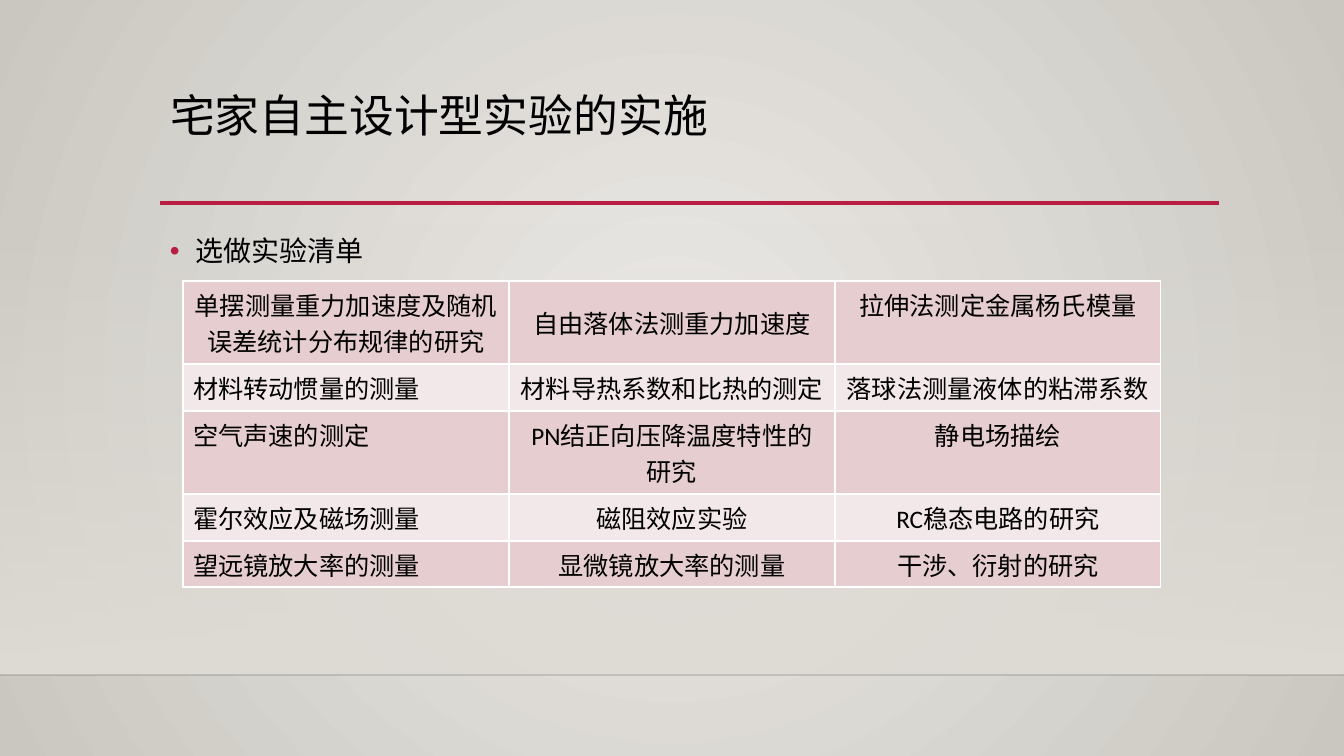
import pptx
import pptx.util
import pptx.dml.color
import pptx.enum.shapes
import pptx.enum.text
import pptx.oxml
import pptx.oxml.ns

PX = 914400 / 100.8
COLORS = {
    "text": "000000", "accent": "B71E42", "border": "FFFFFF",
    "odd_row": "E6CDCF", "even_row": "F3E8E9",
    "bg_center": "ECEAE7", "bg_edge": "CAC7C1", "wall": "DFDBD5",
    "floor_line": "000001",
}
RGB = {name: pptx.dml.color.RGBColor.from_string(c) for name, c in COLORS.items()}
NS = pptx.oxml.ns.nsdecls("a")
ALIGN = pptx.enum.text.PP_ALIGN
ANCHOR = pptx.enum.text.MSO_ANCHOR


def px(*lengths):
    return [pptx.util.Emu(round(n * PX)) for n in lengths]


def write(tf, text, size=18, align=ALIGN.LEFT, spacing=1.0, bullet=False):
    tf.word_wrap = True
    p = tf.paragraphs[0]
    if bullet:
        pPr = p._p.get_or_add_pPr()
        pPr.set("marL", "228600")
        pPr.set("indent", "-228600")
        for xml in (
            f'<a:buClr {NS}><a:srgbClr val="{COLORS["accent"]}"/></a:buClr>',
            f'<a:buFont {NS} typeface="Arial"/>',
            f'<a:buChar {NS} char="•"/>',
        ):
            pPr.append(pptx.oxml.parse_xml(xml))
    p.alignment = align
    p.line_spacing = spacing
    p.space_before = pptx.util.Pt(0)
    r = p.add_run()
    r.text = text
    r.font.size = pptx.util.Pt(size)
    r.font.name = "Calibri"
    r.font.color.rgb = RGB["text"]


prs = pptx.Presentation()
prs.slide_width, prs.slide_height = px(1344, 756)
s = prs.slides.add_slide(prs.slide_layouts[5])

# Background: radial gradient, with a wall fading in down to the floor line
fill = s.background.fill
fill.gradient()
for stop, name in zip(fill.gradient_stops, ("bg_center", "bg_edge")):
    stop.color.rgb = RGB[name]
lin = s.background._cSld.find(".//" + pptx.oxml.ns.qn("a:lin"))
lin.getparent().replace(lin, pptx.oxml.parse_xml(
    f'<a:path {NS} path="circle">'
    '<a:fillToRect l="50000" t="50000" r="50000" b="50000"/></a:path>'))

wall = s.shapes.add_shape(pptx.enum.shapes.MSO_SHAPE.RECTANGLE, *px(0, 223, 1344, 452))
wall.shadow.inherit = False
wall.line.fill.background()
wall.fill.gradient()
wall.fill.gradient_angle = 270
for stop in wall.fill.gradient_stops:
    stop.color.rgb = RGB["wall"]
first_color = wall._element.spPr.find(".//" + pptx.oxml.ns.qn("a:srgbClr"))
first_color.append(pptx.oxml.parse_xml(f'<a:alpha {NS} val="0"/>'))

for x1, x2, y, name, width, opacity in (
    (0, 1344, 675, "floor_line", 1, 20),
    (160, 1219, 203, "accent", 2.5, 100),
):
    line = s.shapes.add_connector(
        pptx.enum.shapes.MSO_CONNECTOR.STRAIGHT, *px(x1, y, x2, y))
    line.line.color.rgb = RGB[name]
    line.line.width = pptx.util.Pt(width)
    spPr = line._element.spPr
    spPr.append(pptx.oxml.parse_xml(f"<a:effectLst {NS}/>"))
    if opacity < 100:
        spPr.find(".//" + pptx.oxml.ns.qn("a:srgbClr")).append(
            pptx.oxml.parse_xml(f'<a:alpha {NS} val="{opacity * 1000}"/>'))

title = s.shapes.title
title.left, title.top, title.width, title.height = px(160, 89, 1058, 116)
title.text_frame.vertical_anchor = ANCHOR.TOP
write(title.text_frame, "宅家自主设计型实验的实施", size=32, spacing=0.9)

body = s.shapes.add_textbox(*px(160, 222, 1058, 380))
write(body.text_frame, "选做实验清单", size=20, spacing=1.2, bullet=True)

# Table of optional experiments
experiments = [
    ("单摆测量重力加速度及随机误差统计分布规律的研究", "自由落体法测重力加速度", "拉伸法测定金属杨氏模量"),
    ("材料转动惯量的测量", "材料导热系数和比热的测定", "落球法测量液体的粘滞系数"),
    ("空气声速的测定", "PN结正向压降温度特性的研究", "静电场描绘"),
    ("霍尔效应及磁场测量", "磁阻效应实验", "RC稳态电路的研究"),
    ("望远镜放大率的测量", "显微镜放大率的测量", "干涉、衍射的研究"),
]
row_heights = px(83, 47, 83, 47, 46)
table = s.shapes.add_table(5, 3, *px(183, 281, 978, 306)).table
for column in table.columns:
    column.width = px(326)[0]
for i, (row, names) in enumerate(zip(table.rows, experiments)):
    row.height = row_heights[i]
    for j, (cell, name) in enumerate(zip(row.cells, names)):
        left_aligned = i > 0 and j == 0
        write(cell.text_frame, name, align=ALIGN.LEFT if left_aligned else ALIGN.CENTER)
        cell.vertical_anchor = ANCHOR.MIDDLE if i == 0 and j < 2 else ANCHOR.TOP
        tcPr = cell._tc.get_or_add_tcPr()
        for side in ("lnL", "lnR", "lnT", "lnB"):
            tcPr.append(pptx.oxml.parse_xml(
                f'<a:{side} {NS} w="12700"><a:solidFill>'
                f'<a:srgbClr val="{COLORS["border"]}"/></a:solidFill></a:{side}>'))
        cell.fill.solid()
        cell.fill.fore_color.rgb = RGB["even_row" if i % 2 else "odd_row"]

prs.save("out.pptx")
